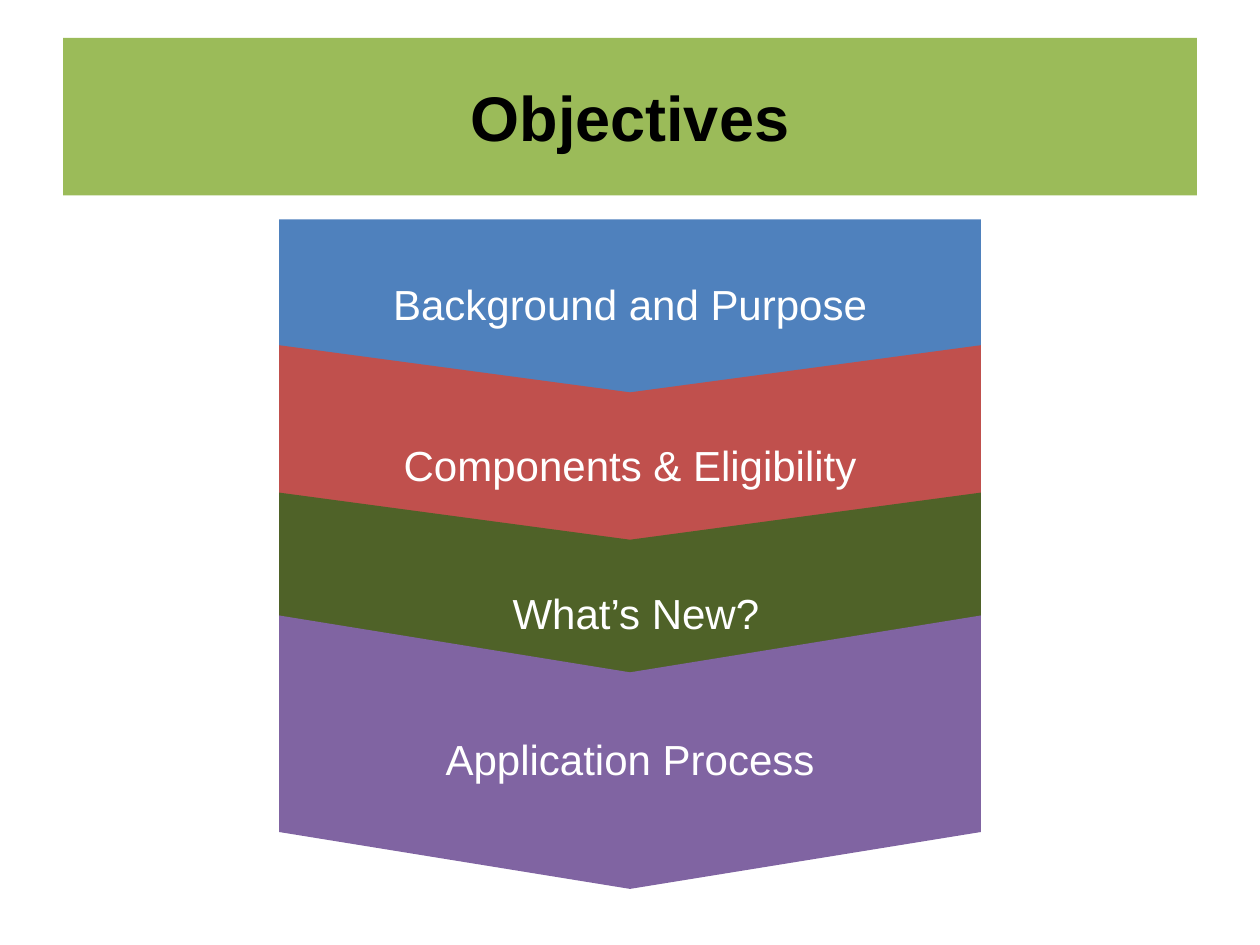
from pptx import Presentation
from pptx.dml.color import RGBColor
from pptx.enum.shapes import MSO_SHAPE as Shape
from pptx.enum.text import MSO_ANCHOR as Anchor, PP_ALIGN as Align
from pptx.util import Inches, Pt


def paint(part, colour):
    part.fill.solid()
    part.fill.fore_color.rgb = RGBColor.from_string(colour)
    part.line.fill.background()


def write(part, text, size, colour, bold=False):
    frame = part.text_frame
    frame.word_wrap = True
    frame.vertical_anchor = Anchor.MIDDLE
    paragraph = frame.paragraphs[0]
    paragraph.text = text
    paragraph.alignment = Align.CENTER
    font = paragraph.font
    font.name, font.size, font.bold = "Arial", Pt(size), bold
    font.color.rgb = RGBColor.from_string(colour)


deck = Presentation()
deck.slide_width, deck.slide_height = Inches(10), Inches(7.5)
slide = deck.slides.add_slide(deck.slide_layouts[5])

# Title banner
title = slide.shapes.title
title.left, title.top = Inches(0.5), Inches(0.3)
title.width, title.height = Inches(9), Inches(1.25)
paint(title, "9BBB59")
write(title, "Objectives", 36, "000000", bold=True)

# Downward stack of objectives, back to front: each is a sideways arrow turned
# by a quarter, so its width is the band's depth and its height the band's span
CENTRE_X = 5
SPAN = 5.57
objectives = [  # text, outline, point, colour, middle, depth, start inset
    ("Background and Purpose", Shape.PENTAGON, 0.221, "4F81BD", 2.45, 1.42, 0.15),
    ("Components & Eligibility", Shape.CHEVRON, 0.208, "C0504D", 3.64, 1.8, 0.17),
    (" What’s New?", Shape.CHEVRON, 0.208, "4F6228", 4.81, 1.8, 0.17),
    ("Application Process", Shape.CHEVRON, 0.208, "8064A2", 5.97, 2.17, 0.17),
]
for text, outline, point, colour, middle, depth, start_inset in objectives:
    band = slide.shapes.add_shape(
        outline, Inches(CENTRE_X - depth / 2), Inches(middle - SPAN / 2),
        Inches(depth), Inches(SPAN))
    band.rotation = 90
    band.adjustments[0] = point
    band.shadow.inherit = False
    paint(band, colour)
    write(band, text, 24, "FFFFFF")

    # Turn the text back upright
    frame = band.text_frame
    frame.margin_left, frame.margin_right = Inches(start_inset), Inches(0.07)
    frame.margin_top = frame.margin_bottom = Inches(0.04)
    frame._txBody.bodyPr.set("vert", "vert270")

deck.save("out.pptx")
